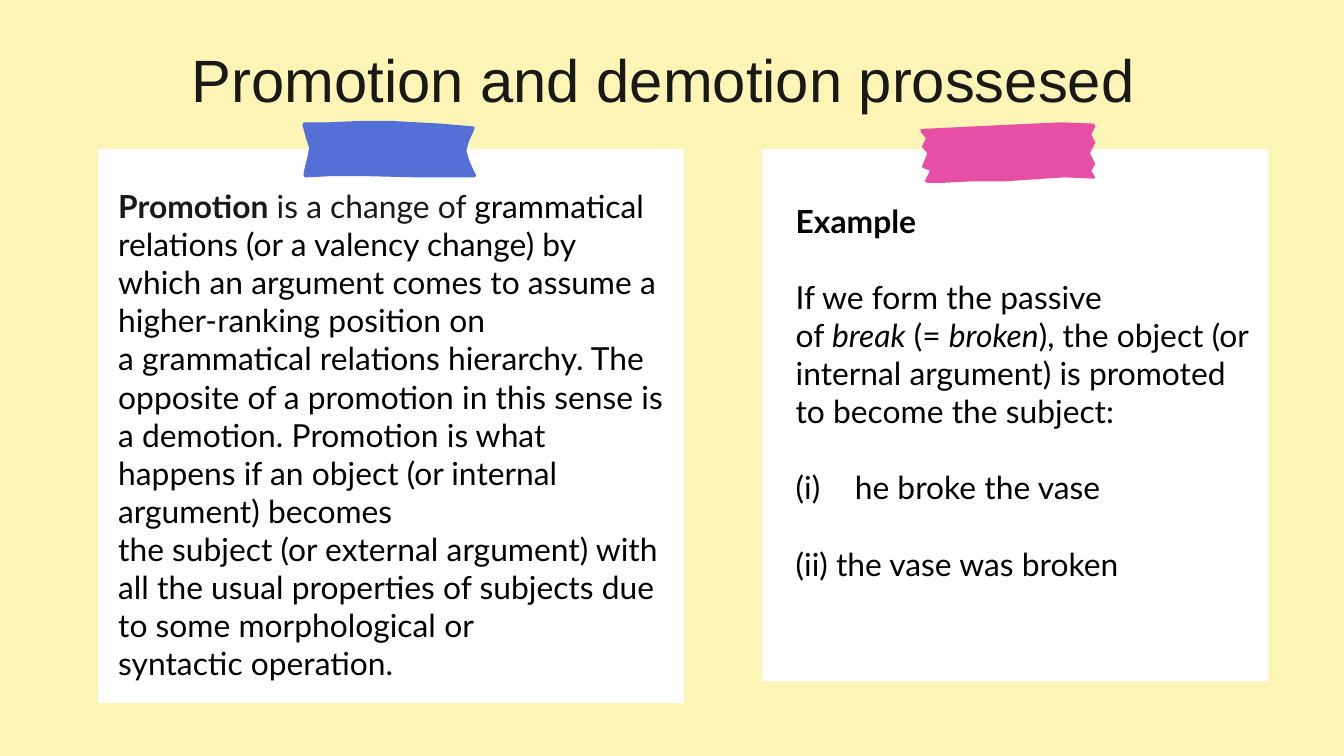
from lxml.etree import SubElement
from pptx import Presentation
from pptx.dml.color import RGBColor
from pptx.enum.shapes import MSO_SHAPE
from pptx.enum.text import MSO_AUTO_SIZE, PP_ALIGN
from pptx.oxml.ns import qn
from pptx.util import Inches, Pt

deck = Presentation()
deck.slide_width = Inches(10)
deck.slide_height = deck.slide_width * 9 // 16
cell = deck.slide_width // 1000
hard_space = chr(160)
page = deck.slides.add_slide(deck.slide_layouts[6])


def paint(fill, color):
    fill.solid()
    fill.fore_color.rgb = RGBColor.from_string(color)


def add_text(left, top, width, height, paragraphs, size, font):
    box = page.shapes.add_textbox(left * cell, top * cell, width * cell, height * cell)
    frame = box.text_frame
    frame.word_wrap = True
    frame.auto_size = MSO_AUTO_SIZE.SHAPE_TO_FIT_TEXT
    frame.margin_left = frame.margin_right = frame.margin_top = frame.margin_bottom = 0
    for index, spans in enumerate(paragraphs):
        para = frame.add_paragraph() if index else frame.paragraphs[0]
        if index:
            para.space_before = Pt(20.4)
        for text, color, style in spans:
            span = para.add_run()
            span.text = text.replace("~", hard_space)
            span.font.size = Pt(size)
            span.font.name = font
            span.font.bold = style == "bold"
            span.font.italic = style == "italic"
            paint(span.font.fill, color)
    return frame


paint(page.background.fill, "FDF5B6")

for left, width, height in [(73, 436, 412), (567, 377, 396)]:
    card = page.shapes.add_shape(
        MSO_SHAPE.RECTANGLE, left * cell, 111 * cell, width * cell, height * cell
    )
    card.shadow.inherit = False
    paint(card.fill, "FFFFFF")
    card.line.fill.background()

title = [[("Promotion and demotion prossesed", "191918", "")]]
add_text(56, 32, 876, 54, title, 32, "Arial").paragraphs[0].alignment = PP_ALIGN.CENTER

definition = [[
    ("Promotion", "191918", "bold"),
    ("~is a change of~", "191918", ""),
    ("grammatical relations~(or a~valency change) by which an~argument~comes to assume "
     "a higher-ranking position on a~grammatical relations hierarchy. The opposite of a "
     "promotion in this sense is a~demotion. Promotion is what happens if an~object~(or~"
     "internal argument) becomes the~subject~(or~external argument) with all the usual "
     "properties of subjects due to some morphological or syntactic~operation.", "000000", ""),
]]
add_text(88, 139, 407, 401, definition, 17, "Lato")

example = [
    [("Example", "000000", "bold")],
    [
        ("If we form the passive of~", "000000", ""),
        ("break", "000000", "italic"),
        ("~(=~", "000000", ""),
        ("broken", "000000", "italic"),
        ("), the object (or internal argument) is promoted to become the subject:", "000000", ""),
    ],
    [("he broke the vase", "000000", "")],
    [("(ii) the vase was broken", "000000", "")],
]
frame = add_text(592, 150, 341, 315, example, 17, "Lato")
numbering = frame.paragraphs[2]._p.get_or_add_pPr()
numbering.set("marL", str(44 * cell))
numbering.set("indent", str(-44 * cell))
SubElement(numbering, qn("a:buFont"), typeface="Lato")
SubElement(numbering, qn("a:buAutoNum"), type="romanLcParenBoth")

tapes = [
    ("5470D6", [
        (354, 130), (352, 126), (349, 119), (347, 112), (349, 105), (353, 96), (353, 94),
        (351, 94), (328, 92), (310, 91), (292, 90), (267, 90), (245, 91), (226, 91),
        (225, 93), (228, 104), (230, 110), (229, 116), (226, 128), (226, 131), (227, 132),
        (248, 131), (269, 131), (311, 132), (353, 132), (354, 131),
    ]),
    ("E64FA5", [
        (814, 92), (790, 91), (769, 92), (747, 93), (685, 96), (685, 98), (689, 103),
        (686, 109), (689, 113), (690, 114), (686, 124), (687, 125), (692, 127), (689, 133),
        (688, 135), (690, 136), (703, 136), (723, 135), (747, 135), (792, 132), (814, 133),
        (815, 132), (812, 127), (815, 122), (811, 114), (815, 106), (812, 100), (815, 94),
    ]),
]
for color, points in tapes:
    builder = page.shapes.build_freeform(*points[0], scale=cell)
    builder.add_line_segments(points[1:], close=True)
    tape = builder.convert_to_shape()
    tape.shadow.inherit = False
    paint(tape.fill, color)
    tape.line.fill.background()

deck.save("out.pptx")
